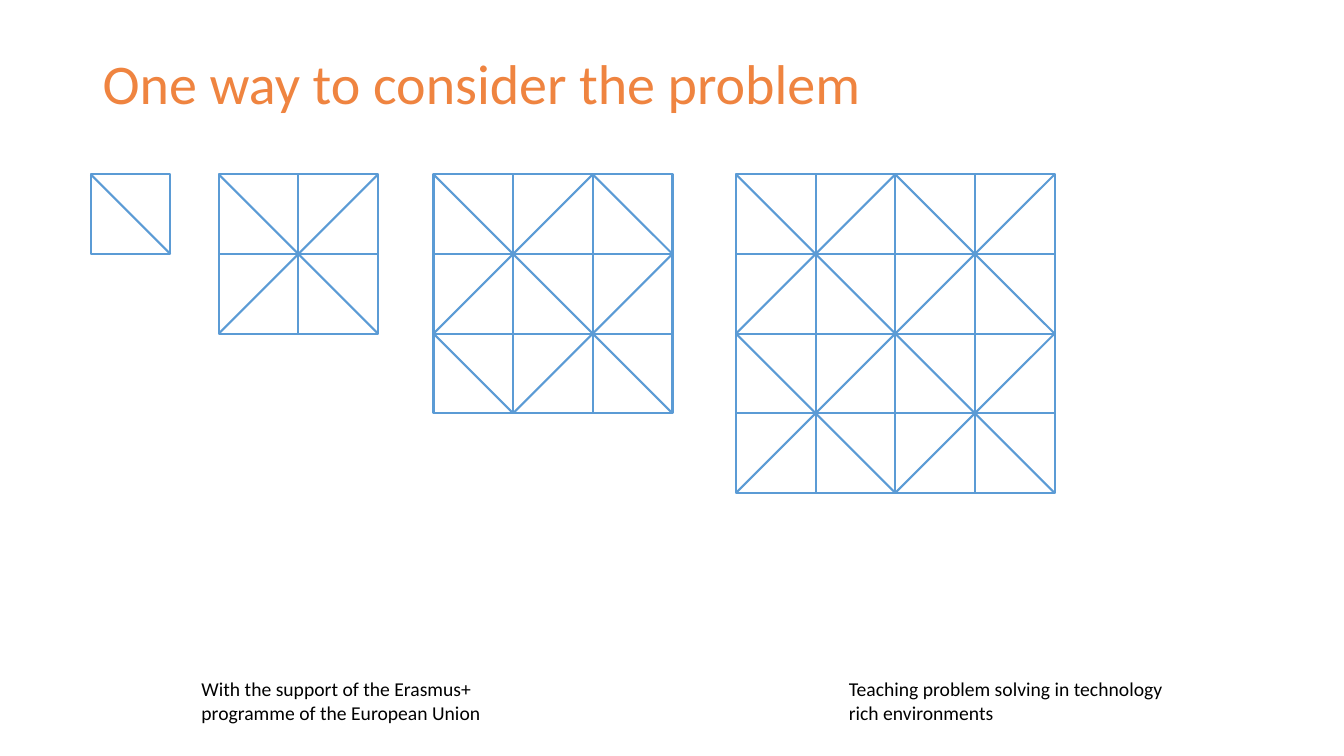
from dataclasses import dataclass

from lxml import etree
from pptx import Presentation
from pptx.dml.color import RGBColor
from pptx.enum.shapes import MSO_CONNECTOR, MSO_SHAPE
from pptx.oxml.ns import qn
from pptx.util import Inches, Pt

RECTANGLE = MSO_SHAPE.RECTANGLE
STRAIGHT = MSO_CONNECTOR.STRAIGHT


@dataclass(frozen=True)
class Theme:
    font: str = "Calibri"
    title_size: Pt = Pt(40)
    footer_size: Pt = Pt(14)
    title_color: RGBColor = RGBColor(0xEF, 0x84, 0x40)
    text_color: RGBColor = RGBColor(0, 0, 0)
    line_color: RGBColor = RGBColor(0x5B, 0x9B, 0xD5)
    line_width: Pt = Pt(1.5)


theme = Theme()

deck = Presentation()
deck.slide_width = Inches(13.33)
deck.slide_height = Inches(7.5)
page = deck.slides.add_slide(deck.slide_layouts[6])


def add_text(text, left, top, width, height, size, color):
    box = page.shapes.add_textbox(
        Inches(left), Inches(top), Inches(width), Inches(height))
    box.text_frame.word_wrap = True
    para = box.text_frame.paragraphs[0]
    para.text = text
    para.font.name = theme.font
    para.font.size = size
    para.font.color.rgb = color


def style_line(line):
    line.color.rgb = theme.line_color
    line.width = theme.line_width


# Footer
add_text("With the support of the Erasmus+ programme of the European Union",
         1.9, 6.67, 3.44, 0.59, theme.footer_size, theme.text_color)
add_text("Teaching problem solving in technology rich environments",
         8.32, 6.67, 3.59, 0.57, theme.footer_size, theme.text_color)

# Grids of 1, 2, 3 and 4 tiles a side, with alternating diagonals
tile_size = 0.79
grid_top = 1.73
grid_lefts = [0.9, 2.17, 4.3, 7.3]

for count, grid_left in enumerate(grid_lefts, start=1):
    for row in range(count):
        for column in range(count):
            left = grid_left + column * tile_size
            top = grid_top + row * tile_size
            right, bottom = left + tile_size, top + tile_size

            tile = page.shapes.add_shape(
                RECTANGLE, Inches(left), Inches(top),
                Inches(tile_size), Inches(tile_size))
            tile.shadow.inherit = False
            tile.fill.background()
            style_line(tile.line)

            # Diagonals fall on even tiles and rise on odd ones
            falls = (row + column) % 2 == 0
            start_y, end_y = (top, bottom) if falls else (bottom, top)
            diagonal = page.shapes.add_connector(
                STRAIGHT, Inches(left), Inches(start_y),
                Inches(right), Inches(end_y))
            style_line(diagonal.line)
            etree.SubElement(diagonal._element.spPr, qn("a:effectLst"))

# Title
add_text("One way to consider the problem",
         0.92, 0.43, 9.71, 0.77, theme.title_size, theme.title_color)

deck.save("out.pptx")
